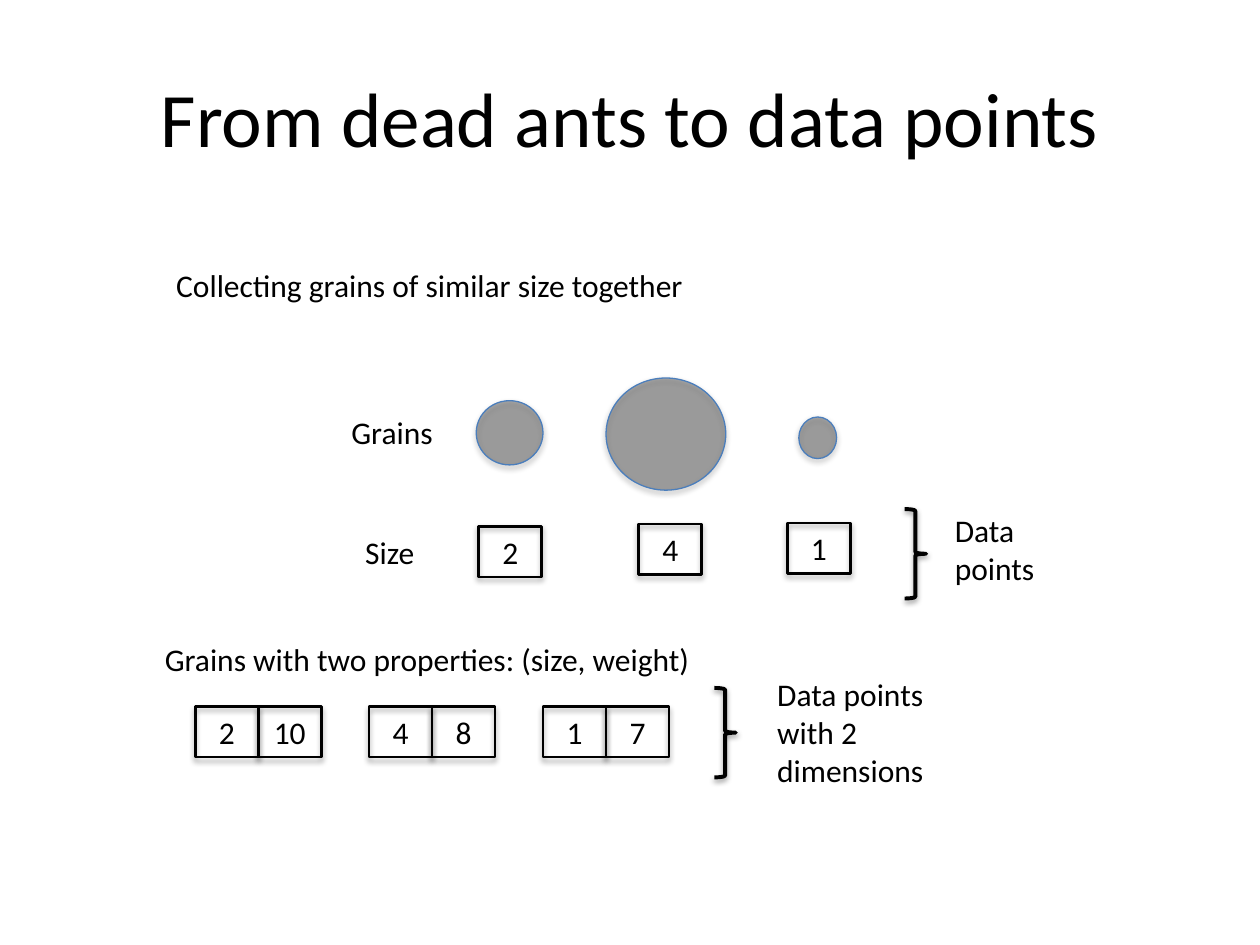
from lxml import etree
from pptx import Presentation
from pptx.dml.color import RGBColor
from pptx.enum.shapes import MSO_SHAPE
from pptx.enum.text import MSO_ANCHOR, PP_ALIGN
from pptx.oxml.ns import qn
from pptx.util import Inches, Pt

BLACK = RGBColor(0, 0, 0)
BLUE = RGBColor(0x4B, 0x7E, 0xBC)
RECT, OVAL, BRACE = MSO_SHAPE.RECTANGLE, MSO_SHAPE.OVAL, MSO_SHAPE.RIGHT_BRACE
LEFT, CENTER = PP_ALIGN.LEFT, PP_ALIGN.CENTER
MIDDLE, TOP = MSO_ANCHOR.MIDDLE, MSO_ANCHOR.TOP
CELL_W, CELL_H = 0.5, 0.4


def add_text(s, text, x, y, w, h, size=18, align=LEFT, anchor=TOP):
    sp = s.shapes.add_textbox(Inches(x), Inches(y), Inches(w), Inches(h))
    tf = sp.text_frame
    tf.word_wrap = True
    tf.vertical_anchor = anchor
    p = tf.paragraphs[0]
    p.alignment = align
    r = p.add_run()
    r.text = text
    for name, value in {"name": "Calibri", "size": Pt(size)}.items():
        setattr(r.font, name, value)
    r.font.color.rgb = BLACK


def add_shadow(sp, alpha, dist):
    """Soft shadow straight below the shape."""
    sp.shadow.inherit = False
    effects = sp._element.spPr.find(qn("a:effectLst"))
    shadow = etree.SubElement(effects, qn("a:outerShdw"), blurRad=str(Pt(3.15)),
                              dist=str(Pt(dist)), dir="5400000", rotWithShape="0")
    color = etree.SubElement(shadow, qn("a:srgbClr"), val=str(BLACK))
    etree.SubElement(color, qn("a:alpha"), val=str(alpha * 1000))


def add_outline(s, kind, x, y, w, h, color, width, alpha=35, dist=1.8):
    sp = s.shapes.add_shape(kind, Inches(x), Inches(y), Inches(w), Inches(h))
    sp.fill.background()
    sp.line.color.rgb = color
    sp.line.width = Pt(width)
    add_shadow(sp, alpha, dist)
    return sp


def add_grain(s, x, y, w, h):
    sp = add_outline(s, OVAL, x, y, w, h, BLUE, 0.75)
    sp.fill.solid()
    sp.fill.fore_color.rgb = BLACK
    color = sp._element.spPr.find(qn("a:solidFill"))[0]
    etree.SubElement(color, qn("a:alpha"), val="40000")
    color[0].set("val", "32000")


def add_cell(s, value, x, y):
    add_outline(s, RECT, x, y, CELL_W, CELL_H, BLACK, 1.5)
    add_text(s, value, x, y, CELL_W, CELL_H, align=CENTER)


def add_brace(s, x, y):
    add_outline(s, BRACE, x, y, 0.17, 0.71, BLACK, 2.25, alpha=38, dist=1.6)


def size_diagram(s, x, y):
    """Three grains, each with one measured size below it."""
    # Grains
    add_text(s, "Grains", x, y + 0.23, 0.98, 0.4)
    for dx, dy, w, h in [(1.09, 0.18, 0.53, 0.51), (2.12, 0, 0.95, 0.89),
                         (3.65, 0.31, 0.3, 0.33)]:
        add_grain(s, x + dx, y + dy, w, h)
    # Sizes
    add_text(s, "Size", x + 0.11, y + 1.18, 0.65, 0.4)
    for value, dx, dy in [("2", 1.11, 1.18), ("4", 2.38, 1.16), ("1", 3.56, 1.15)]:
        add_cell(s, value, x + dx, y + dy)
    # Brace and its label
    add_brace(s, x + 4.49, y + 1.04)
    add_text(s, "Data points", x + 4.79, y + 1.01, 0.89, 0.71)


def pair_diagram(s, x, y):
    """Three (size, weight) pairs of adjoining cells."""
    add_text(s, "Grains with two properties: (size, weight)", x, y, 5.04, 0.4)
    for i, pair in enumerate([("2", "10"), ("4", "8"), ("1", "7")]):
        for j, value in enumerate(pair):
            add_cell(s, value, x + 0.34 + i * 1.38 + j * CELL_W, y + 0.58)
    # Brace and its label
    add_brace(s, x + 4.46, y + 0.43)
    add_text(s, "Data points with 2 dimensions", x + 4.86, y + 0.28, 1.44, 1.01)


def main():
    prs = Presentation()
    prs.slide_width, prs.slide_height = Inches(10), Inches(7.5)
    s = prs.slides.add_slide(prs.slide_layouts[6])
    add_text(s, "From dead ants to data points", 0.5, 0.3, 9, 1.25,
             size=44, align=CENTER, anchor=MIDDLE)
    add_text(s, "Collecting grains of similar size together", 1.3, 2.06, 5.35, 0.4)
    size_diagram(s, 2.69, 3)
    pair_diagram(s, 1.21, 5.03)
    prs.save("out.pptx")


if __name__ == "__main__":
    main()
